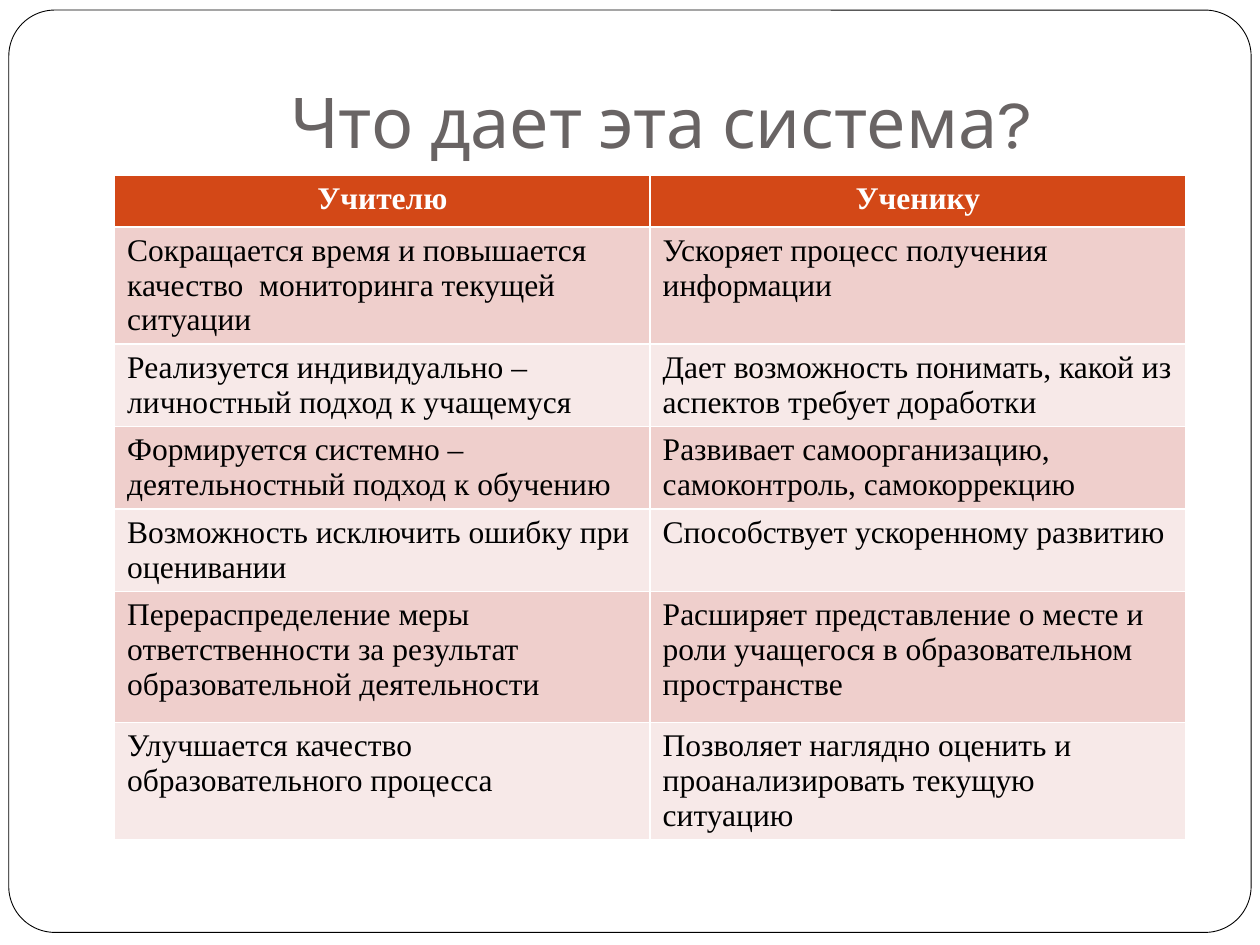
from dataclasses import dataclass

from pptx import Presentation
from pptx.dml.color import RGBColor
from pptx.enum.shapes import MSO_SHAPE
from pptx.enum.text import MSO_ANCHOR, PP_ALIGN
from pptx.util import Inches, Pt

LEFT, CENTER = PP_ALIGN.LEFT, PP_ALIGN.CENTER
BOTTOM = MSO_ANCHOR.BOTTOM
ROUNDED = MSO_SHAPE.ROUNDED_RECTANGLE
TITLE_ONLY = 5


@dataclass(frozen=True)
class Theme:
    paper: str = "FFFFFF"
    ink: str = "000000"
    title: str = "696464"
    header: str = "D34817"
    bands: tuple = ("EFCFCC", "F7E9E8")
    title_font: str = "Karla"
    table_font: str = "Times New Roman"
    title_size: int = 40
    table_size: int = 18


THEME = Theme()
TITLE = "Что дает эта система?"
HEADINGS = ("Учителю", "Ученику")
BENEFITS = (
    ("Сокращается время и повышается качество  мониторинга текущей ситуации",
     "Ускоряет процесс получения информации"),
    ("Реализуется индивидуально – личностный подход к учащемуся",
     "Дает возможность понимать, какой из аспектов требует доработки"),
    ("Формируется системно – деятельностный подход к обучению",
     "Развивает самоорганизацию, самоконтроль, самокоррекцию"),
    ("Возможность исключить ошибку при оценивании",
     "Способствует ускоренному развитию"),
    ("Перераспределение меры ответственности за результат образовательной деятельности",
     "Расширяет представление о месте и роли учащегося в образовательном пространстве"),
    ("Улучшается качество образовательного процесса",
     "Позволяет наглядно оценить и проанализировать текущую ситуацию"),
)
ROW_HEIGHT = Inches(0.41)
TALL_ROW, TALL_HEIGHT = 5, Inches(1.04)


def write(frame, text, *, font, size, color, bold=False, align=LEFT):
    para = frame.paragraphs[0]
    para.alignment = align
    span = para.add_run()
    span.text = text
    span.font.name = font
    span.font.size = Pt(size)
    span.font.bold = bold
    span.font.color.rgb = RGBColor.from_string(color)


def paint(fill, color):
    fill.solid()
    fill.fore_color.rgb = RGBColor.from_string(color)


def add_page_frame(page, box):
    """Draw the rounded page outline behind everything else."""
    outline = page.shapes.add_shape(ROUNDED, *box)
    outline.adjustments[0] = 0.05
    outline.shadow.inherit = False
    paint(outline.fill, THEME.paper)
    paint(outline.line.fill, THEME.ink)
    outline.line.width = Pt(0.5)
    page.shapes._spTree.insert(2, outline._element)


def place_title(page, box):
    title = page.shapes.title
    title.left, title.top, title.width, title.height = box
    frame = title.text_frame
    frame.vertical_anchor = BOTTOM
    frame.margin_left = frame.margin_right = frame.margin_bottom = Inches(0.1)
    frame.margin_top = Inches(0.05)
    write(frame, TITLE, font=THEME.title_font, size=THEME.title_size,
          color=THEME.title, align=CENTER)


def add_benefits_table(page, box):
    rows = (HEADINGS, *BENEFITS)
    table = page.shapes.add_table(len(rows), len(HEADINGS), *box).table
    for number, texts in enumerate(rows):
        is_header = number == 0
        table.rows[number].height = TALL_HEIGHT if number == TALL_ROW else ROW_HEIGHT
        background = THEME.header if is_header else THEME.bands[(number - 1) % 2]
        for column, text in enumerate(texts):
            cell = table.cell(number, column)
            paint(cell.fill, background)
            write(cell.text_frame, text, font=THEME.table_font, size=THEME.table_size,
                  color=THEME.paper if is_header else THEME.ink,
                  bold=is_header, align=CENTER if is_header else LEFT)


def main():
    deck = Presentation()
    deck.slide_width, deck.slide_height = Inches(10), Inches(7.5)
    page = deck.slides.add_slide(deck.slide_layouts[TITLE_ONLY])
    paint(page.background.fill, THEME.paper)
    add_page_frame(page, (Inches(0.07), Inches(0.08), Inches(9.86), Inches(7.32)))
    place_title(page, (Inches(1), Inches(0.3), Inches(8.5), Inches(1.09)))
    add_benefits_table(page, (Inches(0.91), Inches(1.39), Inches(8.5), Inches(5.84)))
    deck.save("out.pptx")


if __name__ == "__main__":
    main()
